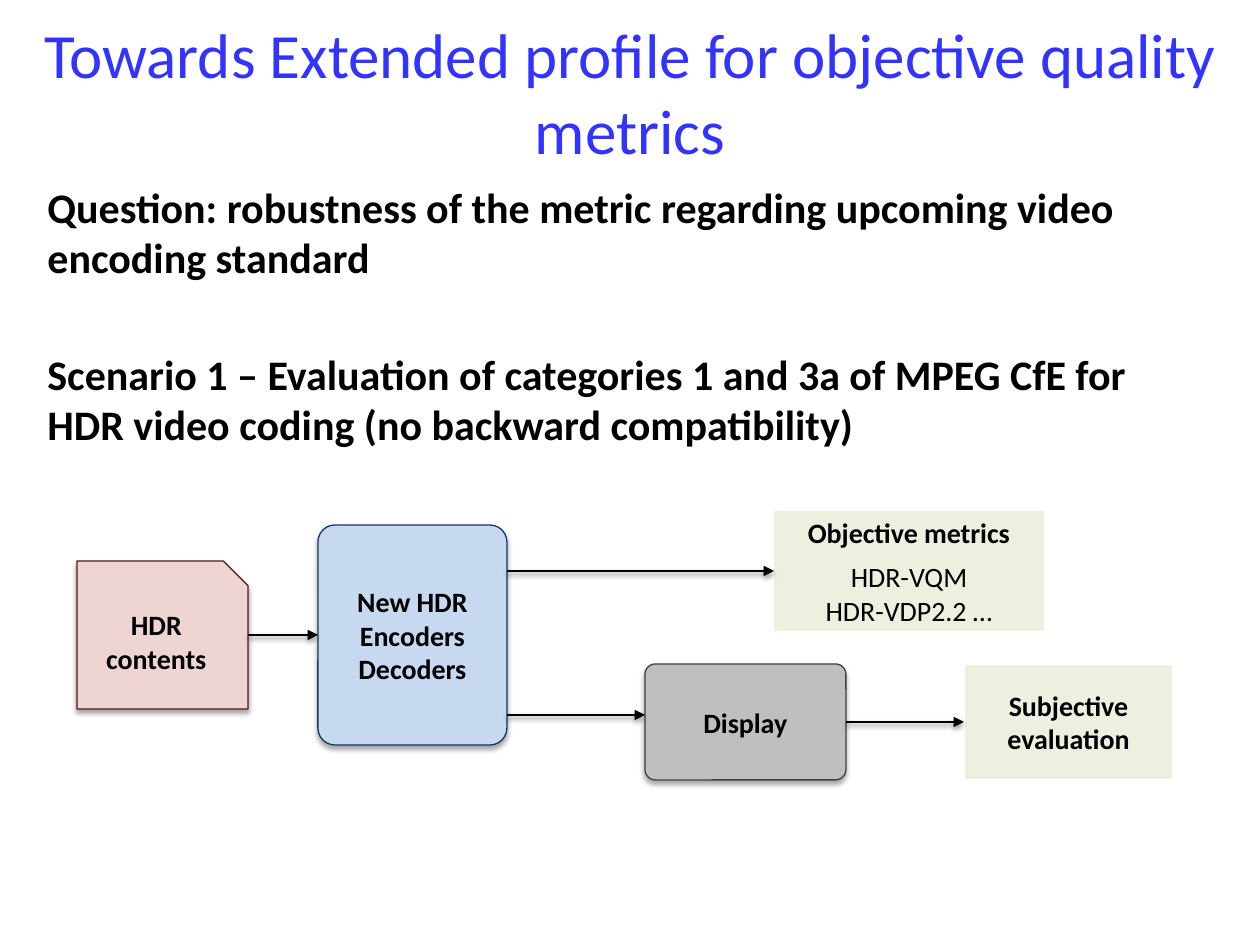
from lxml.etree import SubElement as Sub
from pptx import Presentation
from pptx.dml.color import RGBColor as Rgb
from pptx.enum.shapes import MSO_CONNECTOR as Link, MSO_SHAPE as Kind
from pptx.enum.text import MSO_ANCHOR as Anchor, PP_ALIGN as Align
from pptx.oxml.ns import qn
from pptx.util import Emu, Pt

SCALE = 914400 / 126
HUES = {
    "title": "3333FF", "ink": "000000",
    "blue": "C6D9F1", "navy": "17375E",
    "pink": "EED4D3", "wine": "4F1A1A",
    "gray": "BFBFBF", "dark": "404040",
    "green": "EBF1DE", "white": "FFFFFF",
}
HEAD = {"size": Pt(36), "bold": False}
BODY = {"size": Pt(24), "bold": True}
LABEL = {"size": Pt(16), "bold": True}
PLAIN = {"size": Pt(16), "bold": False}
MID = {"alignment": Align.CENTER}


def px(*nums):
    return [Emu(round(n * SCALE)) for n in nums]


def hue(name):
    return Rgb.from_string(HUES[name])


def apply(item, form):
    for key, value in form.items():
        setattr(item, key, value)


def write(shape, rows, anchor=Anchor.MIDDLE, color="ink"):
    """Fill a shape with rows of (text, font format, paragraph format)."""
    frame = shape.text_frame
    apply(frame, {"word_wrap": True, "vertical_anchor": anchor})
    for i, (text, font, form) in enumerate(rows):
        para = frame.add_paragraph() if i else frame.paragraphs[0]
        apply(para, form)
        run = para.add_run()
        run.text = text
        apply(run.font, {"name": "Calibri", **font})
        run.font.color.rgb = hue(color)


def shade(shape, alpha, dist):
    """Cast a soft black shadow straight down."""
    props = shape._element.spPr
    for old in props.findall(qn("a:effectLst")):
        props.remove(old)
    cast = Sub(Sub(props, qn("a:effectLst")), qn("a:outerShdw"),
               blurRad=str(Pt(3.1)), dist=str(Pt(dist)),
               dir="5400000", rotWithShape="0")
    tone = Sub(cast, qn("a:srgbClr"), val=HUES["ink"])
    Sub(tone, qn("a:alpha"), val=str(alpha * 1000))


def add_text(slide, area, rows, **form):
    write(slide.shapes.add_textbox(*px(*area)), rows, **form)


def add_box(slide, kind, area, fill, edge, rows, round_by=None, soft=False):
    box = slide.shapes.add_shape(kind, *px(*area))
    box.shadow.inherit = False
    if round_by is not None:
        box.adjustments[0] = round_by
    box.fill.solid()
    box.fill.fore_color.rgb = hue(fill)
    if edge:
        box.line.color.rgb = hue(edge)
        box.line.width = Pt(0.75)
    else:
        box.line.fill.background()
    if soft:
        shade(box, 35, 1.8)
    write(box, rows)
    return box


def add_arrow(slide, start, end, source=None, target=None):
    """Draw a rightward arrow, joined to the boxes that are given."""
    line = slide.shapes.add_connector(Link.STRAIGHT, *px(*start, *end))
    if source:
        line.begin_connect(source, 3)
    if target:
        line.end_connect(target, 1)
    line.line.color.rgb = hue("ink")
    line.line.width = Pt(1.5)
    Sub(line.line._get_or_add_ln(), qn("a:tailEnd"), type="triangle")
    shade(line, 38, 1.6)


def main():
    deck = Presentation()
    deck.slide_width, deck.slide_height = px(1260, 945)
    slide = deck.slides.add_slide(deck.slide_layouts[6])

    add_text(slide, (0, 0, 1260, 183), [
        ("Towards Extended profile for objective quality metrics", HEAD, MID),
    ], color="title")
    add_text(slide, (35, 175, 1134, 713), [
        ("Question: robustness of the metric regarding upcoming video "
         "encoding standard", BODY, {}),
        ("Scenario 1 – Evaluation of categories 1 and 3a of MPEG CfE for "
         "HDR video coding (no backward compatibility)", BODY,
         {"space_before": Pt(38)}),
    ], anchor=Anchor.TOP)

    coder = add_box(slide, Kind.ROUNDED_RECTANGLE, (318, 525, 189, 220),
                    "blue", "navy", [("New HDR Encoders", LABEL, MID),
                                     ("Decoders", LABEL, MID)], 0.09, True)
    metric = add_box(slide, Kind.RECTANGLE, (774, 511, 270, 120),
                     "green", None, [
                         ("Objective metrics", LABEL,
                          {**MID, "space_after": Pt(6)}),
                         ("HDR-VQM", PLAIN, MID),
                         ("HDR-VDP2.2 …", PLAIN, MID)])
    screen = add_box(slide, Kind.ROUNDED_RECTANGLE, (645, 664, 201, 116),
                     "gray", "dark", [("Display", LABEL, MID)], 0.09, True)
    rating = add_box(slide, Kind.RECTANGLE, (964, 664, 209, 116), "green",
                     "white", [("Subjective evaluation", LABEL, MID)])
    source = add_box(slide, Kind.SNIP_1_RECTANGLE, (77, 561, 171, 148),
                     "pink", "wine", [("HDR contents", LABEL, MID)],
                     soft=True)

    add_arrow(slide, (248, 635), (318, 635), source, coder)
    add_arrow(slide, (507, 571), (774, 571), target=metric)
    add_arrow(slide, (846, 722), (964, 722), screen, rating)
    add_arrow(slide, (507, 715), (645, 715))
    deck.save("out.pptx")


if __name__ == "__main__":
    main()
